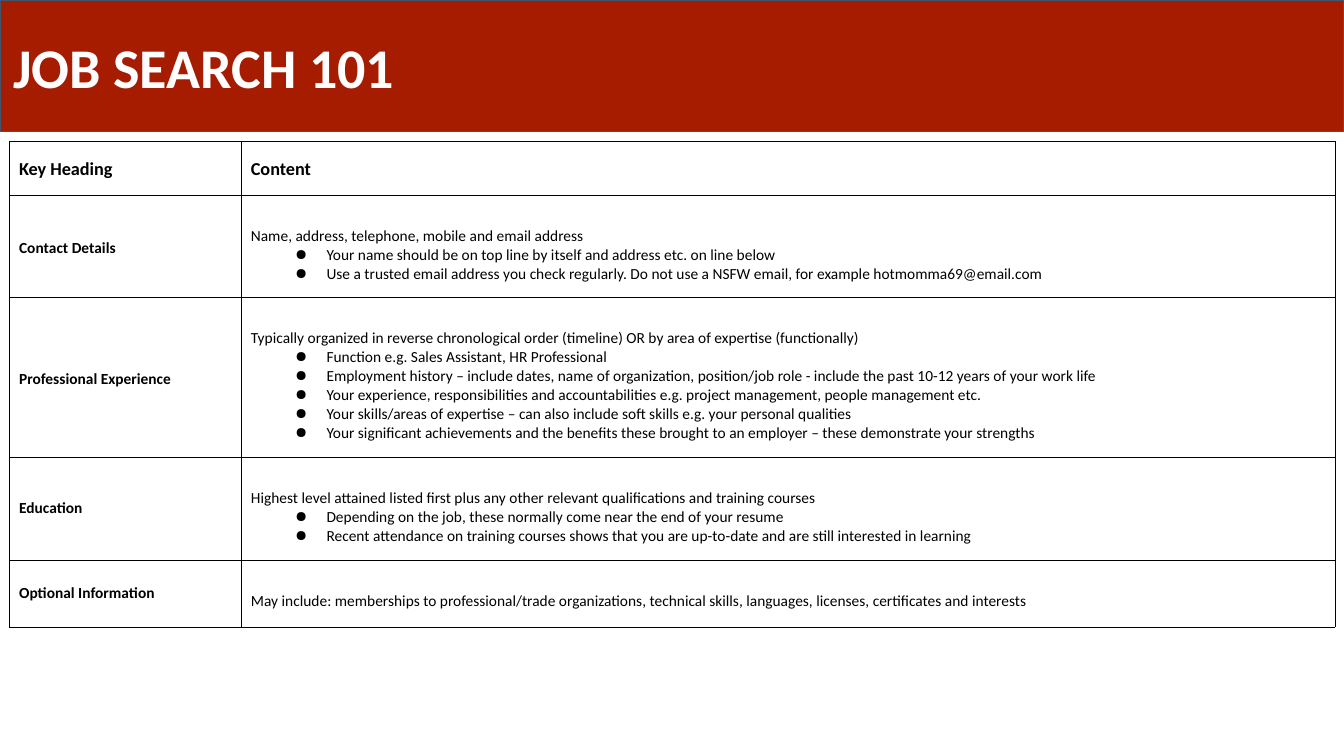
from lxml import etree
from pptx import Presentation
from pptx.dml.color import RGBColor
from pptx.enum.text import MSO_ANCHOR, MSO_AUTO_SIZE, PP_ALIGN
from pptx.oxml.ns import qn
from pptx.util import Pt

LEFT = PP_ALIGN.LEFT
TOP, MIDDLE = MSO_ANCHOR.TOP, MSO_ANCHOR.MIDDLE
NO_FIT = MSO_AUTO_SIZE.NONE

RED = RGBColor(0xA6, 0x1C, 0x00)
SLATE = RGBColor(0x44, 0x54, 0x6A)
WHITE = RGBColor(0xFF, 0xFF, 0xFF)
BLACK = RGBColor(0x00, 0x00, 0x00)

TITLE_ONLY = 5
INSET = 9.4      # banner inset and vertical cell inset
DROP = 22.8      # top inset of the content cells

# Heading, heading line spacing, row height, lead line, bullets
SECTIONS = [
    ("Contact Details", 1.2, 73,
     "Name, address, telephone, mobile and email address",
     ["Your name should be on top line by itself and address etc. on line below",
      "Use a trusted email address you check regularly. Do not use a NSFW email, "
      "for example hotmomma69@email.com"]),
    ("Professional Experience", 1.2, 114.25,
     "Typically organized in reverse chronological order (timeline) OR by area of "
     "expertise (functionally)",
     ["Function e.g. Sales Assistant, HR Professional",
      "Employment history – include dates, name of organization, position/job role - "
      "include the past 10-12 years of your work life",
      "Your experience, responsibilities and accountabilities e.g. project management, "
      "people management etc.",
      "Your skills/areas of expertise – can also include soft skills e.g. your personal "
      "qualities",
      "Your significant achievements and the benefits these brought to an employer – "
      "these demonstrate your strengths"]),
    ("Education", 1.0, 73.25,
     "Highest level attained listed first plus any other relevant qualifications and "
     "training courses",
     ["Depending on the job, these normally come near the end of your resume",
      "Recent attendance on training courses shows that you are up-to-date and are still "
      "interested in learning"]),
    ("Optional Information", 1.0, 48,
     "May include: memberships to professional/trade organizations, technical skills, "
     "languages, licenses, certificates and interests", []),
]


class SlideBuilder:
    """Holds the text style and the current slide."""

    def __init__(self, slide, font="Calibri"):
        self.s = slide
        self.font = font

    def style(self, p, size, color, bold):
        p.alignment = LEFT
        for r in p.runs:
            r.font.name = self.font
            r.font.size = Pt(size)
            r.font.bold = bold
            r.font.color.rgb = color

    def banner(self, text, width, height):
        sp = self.s.shapes.title
        sp.left, sp.top, sp.width, sp.height = Pt(0), Pt(0), Pt(width), Pt(height)
        sp.fill.solid()
        sp.fill.fore_color.rgb = RED
        sp.line.color.rgb = SLATE
        sp.line.width = Pt(0.75)
        tf = sp.text_frame
        tf.text = text
        tf.auto_size = NO_FIT
        tf.word_wrap = True
        tf.vertical_anchor = MIDDLE
        tf.margin_left = tf.margin_right = tf.margin_top = tf.margin_bottom = Pt(INSET)
        self.style(tf.paragraphs[0], 40, WHITE, True)

    def table(self, left, top, widths, heights):
        frame = self.s.shapes.add_table(len(heights), len(widths), Pt(left), Pt(top),
                                        Pt(sum(widths)), Pt(sum(heights)))
        tbl = frame.table
        tbl.first_row = tbl.horz_banding = False
        for column, width in zip(tbl.columns, widths):
            column.width = Pt(width)
        for row, height in zip(tbl.rows, heights):
            row.height = Pt(height)
        return tbl

    def cell(self, cell, lines, size, bold=False, spacing=1.0, anchor=TOP, top=INSET):
        """Fill a cell; every line after the first is a bullet."""
        self.borders(cell)
        cell.fill.background()
        cell.vertical_anchor = anchor
        cell.margin_left = cell.margin_right = Pt(6.9)
        cell.margin_top, cell.margin_bottom = Pt(top), Pt(INSET)
        tf = cell.text_frame
        for i, line in enumerate(lines):
            p = tf.add_paragraph() if i else tf.paragraphs[0]
            p.text = line
            p.line_spacing = spacing
            if i:
                self.bullet(p)
            self.style(p, size, BLACK, bold)

    def bullet(self, p):
        pPr = p._p.get_or_add_pPr()
        pPr.set("marL", str(Pt(54)))
        pPr.set("indent", str(Pt(-22.5)))
        etree.SubElement(pPr, qn("a:buChar")).set("char", "●")

    def borders(self, cell):
        tcPr = cell._tc.get_or_add_tcPr()
        for side in ("a:lnL", "a:lnR", "a:lnT", "a:lnB"):
            ln = etree.SubElement(tcPr, qn(side), w=str(Pt(0.25)))
            fill = etree.SubElement(ln, qn("a:solidFill"))
            etree.SubElement(fill, qn("a:srgbClr"), val=str(BLACK))


def main():
    prs = Presentation()
    prs.slide_width, prs.slide_height = Pt(960), Pt(540)
    b = SlideBuilder(prs.slides.add_slide(prs.slide_layouts[TITLE_ONLY]))

    # Title banner
    b.banner("JOB SEARCH 101", 960, 93.75)

    # Table with its header row
    heights = [38.5] + [section[2] for section in SECTIONS]
    tbl = b.table(6.75, 100.8, [165.6, 781.2], heights)
    for col, text in enumerate(("Key Heading", "Content")):
        b.cell(tbl.cell(0, col), [text], 13, bold=True, spacing=1.2)

    # Resume sections
    for row, (heading, spacing, _, lead, bullets) in enumerate(SECTIONS, start=1):
        b.cell(tbl.cell(row, 0), [heading], 11, bold=True, spacing=spacing, anchor=MIDDLE)
        b.cell(tbl.cell(row, 1), [lead] + bullets, 11, top=DROP)

    prs.save("out.pptx")


if __name__ == "__main__":
    main()
